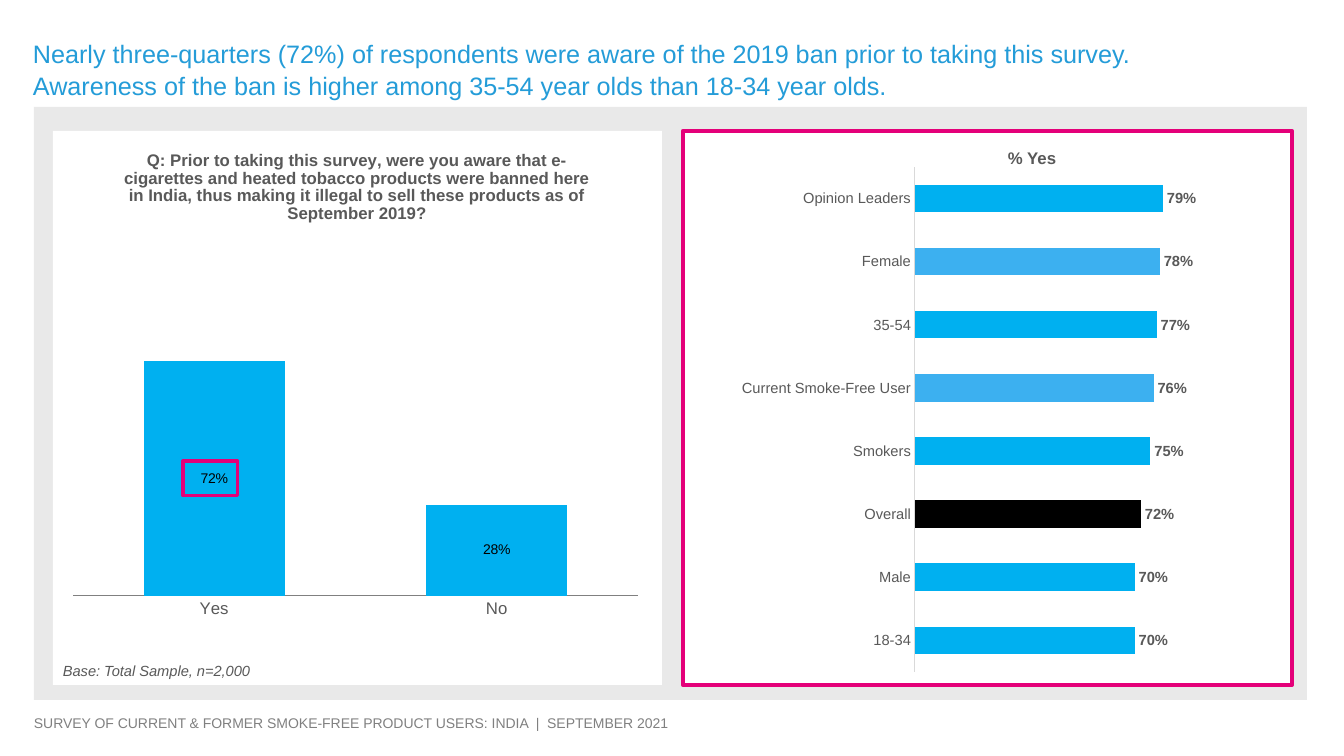
"""Build the survey slide on awareness of the 2019 ban."""
import pptx
import pptx.chart.data
import pptx.dml.color
import pptx.enum.chart
import pptx.enum.shapes
import pptx.oxml
import pptx.oxml.ns
import pptx.util

RGBColor = pptx.dml.color.RGBColor
WHITE = RGBColor(0xFF, 0xFF, 0xFF)
BLACK = RGBColor(0x00, 0x00, 0x00)
PANEL_GRAY = RGBColor(0xE9, 0xE9, 0xE9)
AXIS_GRAY = RGBColor(0xD9, 0xD9, 0xD9)
BASELINE_GRAY = RGBColor(0x80, 0x80, 0x80)
TEXT_GRAY = RGBColor(0x59, 0x59, 0x59)
PINK = RGBColor(0xE4, 0x00, 0x79)
HEADLINE_BLUE = RGBColor(0x24, 0x9C, 0xD8)
BAR_BLUE = RGBColor(0x00, 0xB0, 0xF0)
LIGHT_BLUE = RGBColor(0x3C, 0xB0, 0xF0)

FONT = "Arial"
SLIDE_SIZE = (1344, 756)
EMU_PER_PX = 914400 / 100.8

BACKDROP = (34, 107, 1273, 593)
ANSWER_PANEL = (53, 131, 609, 554)
GROUP_PANEL = (683, 131, 609, 554)
HIGHLIGHT = (183, 461, 55, 35)

HEADLINE = (
    "Nearly three-quarters (72%) of respondents were aware of the 2019 ban "
    "prior to taking this survey.\v"
    "Awareness of the ban is higher among 35-54 year olds than 18-34 year olds."
)
FOOTER = "SURVEY OF CURRENT & FORMER SMOKE-FREE PRODUCT USERS: INDIA  |  SEPTEMBER 2021"
BASE_NOTE = "Base: Total Sample, n=2,000"
QUESTION = (
    "Q: Prior to taking this survey, were you aware that e-cigarettes and heated "
    "tobacco products were banned here in India, thus making it illegal to sell "
    "these products as of September 2019?"
)

ANSWERS = {"Yes": 0.72, "No": 0.28}
AWARE_BY_GROUP = {
    "18-34": 0.70,
    "Male": 0.70,
    "Overall": 0.72,
    "Smokers": 0.75,
    "Current Smoke-Free User": 0.76,
    "35-54": 0.77,
    "Female": 0.78,
    "Opinion Leaders": 0.79,
}
GROUP_COLORS = {
    "Overall": BLACK,
    "Current Smoke-Free User": LIGHT_BLUE,
    "Female": LIGHT_BLUE,
}


def emu(box):
    return [round(length * EMU_PER_PX) for length in box]


def add_box(slide, box, fill=None, line_width=None):
    shape = slide.shapes.add_shape(pptx.enum.shapes.MSO_SHAPE.RECTANGLE, *emu(box))
    shape.shadow.inherit = False
    if fill is None:
        shape.fill.background()
    else:
        shape.fill.solid()
        shape.fill.fore_color.rgb = fill
    if line_width is None:
        shape.line.fill.background()
    else:
        shape.line.color.rgb = PINK
        shape.line.width = pptx.util.Pt(line_width)


def style_font(font, size, color, bold=False, italic=False):
    font.name = FONT
    font.size = pptx.util.Pt(size)
    font.color.rgb = color
    font.bold = bold
    font.italic = italic


def add_text(slide, box, text, size, color, bold=False, italic=False, spacing=1.0):
    frame = slide.shapes.add_textbox(*emu(box)).text_frame
    frame.word_wrap = True
    frame.text = text
    paragraph = frame.paragraphs[0]
    paragraph.line_spacing = spacing
    style_font(paragraph.font, size, color, bold, italic)


def place_plot(chart, box, plot_box):
    """Fix the inner plot area at plot_box within the chart at box."""
    left, top, width, height = box
    plot_left, plot_top, plot_width, plot_height = plot_box
    fractions = {
        "x": (plot_left - left) / width,
        "y": (plot_top - top) / height,
        "w": plot_width / width,
        "h": plot_height / height,
    }
    modes = '<c:xMode val="edge"/><c:yMode val="edge"/>'
    values = "".join(f'<c:{key} val="{value:.4f}"/>' for key, value in fractions.items())
    layout = pptx.oxml.parse_xml(
        f'<c:layout {pptx.oxml.ns.nsdecls("c")}><c:manualLayout>'
        f'<c:layoutTarget val="inner"/>{modes}{values}</c:manualLayout></c:layout>'
    )
    plot_area = chart.element.find(".//" + pptx.oxml.ns.qn("c:plotArea"))
    for automatic in plot_area.findall(pptx.oxml.ns.qn("c:layout")):
        plot_area.remove(automatic)
    plot_area.insert(0, layout)


def add_bars(slide, kind, box, plot_box, shares, gap, axis_size, axis_color):
    data = pptx.chart.data.CategoryChartData(number_format="0%")
    data.categories = list(shares)
    data.add_series("Series 1", list(shares.values()))
    chart = slide.shapes.add_chart(kind, *emu(box), data).chart
    chart.has_legend = False
    chart.has_title = False
    style_font(chart.font, axis_size, TEXT_GRAY)
    place_plot(chart, box, plot_box)

    value_axis = chart.value_axis
    value_axis.minimum_scale = 0
    value_axis.maximum_scale = 1
    value_axis.has_major_gridlines = False
    value_axis.visible = False
    category_axis = chart.category_axis
    category_axis.major_tick_mark = pptx.enum.chart.XL_TICK_MARK.NONE
    category_axis.format.line.color.rgb = axis_color
    category_axis.format.line.width = pptx.util.Pt(0.75)
    style_font(category_axis.tick_labels.font, axis_size, TEXT_GRAY)

    plot = chart.plots[0]
    plot.gap_width = gap
    plot.vary_by_categories = False
    fill = plot.series[0].format.fill
    fill.solid()
    fill.fore_color.rgb = BAR_BLUE
    return chart


def label_bars(chart, position, size, color, bold=False):
    plot = chart.plots[0]
    plot.has_data_labels = True
    labels = plot.data_labels
    labels.show_value = True
    labels.number_format = "0%"
    labels.number_format_is_linked = False
    labels.position = position
    style_font(labels.font, size, color, bold)


def add_answer_chart(slide):
    chart = add_bars(
        slide, pptx.enum.chart.XL_CHART_TYPE.COLUMN_CLUSTERED,
        (54, 131, 606, 505), (73, 270, 565, 326), ANSWERS, 100, 12, BASELINE_GRAY,
    )
    label_bars(chart, pptx.enum.chart.XL_LABEL_POSITION.CENTER, 10, BLACK)
    chart.has_title = True
    frame = chart.chart_title.text_frame
    frame.text = QUESTION
    style_font(frame.paragraphs[0].font, 12, TEXT_GRAY, bold=True)


def add_group_chart(slide):
    chart = add_bars(
        slide, pptx.enum.chart.XL_CHART_TYPE.BAR_CLUSTERED,
        (686, 131, 607, 553), (915, 167, 314, 505), AWARE_BY_GROUP, 130, 10.5, AXIS_GRAY,
    )
    label_bars(chart, pptx.enum.chart.XL_LABEL_POSITION.OUTSIDE_END, 10.5, TEXT_GRAY, bold=True)
    points = chart.plots[0].series[0].points
    for index, group in enumerate(AWARE_BY_GROUP):
        if group in GROUP_COLORS:
            fill = points[index].format.fill
            fill.solid()
            fill.fore_color.rgb = GROUP_COLORS[group]


def main():
    presentation = pptx.Presentation()
    presentation.slide_width, presentation.slide_height = emu(SLIDE_SIZE)
    slide = presentation.slides.add_slide(presentation.slide_layouts[6])

    add_box(slide, BACKDROP, PANEL_GRAY)
    add_text(slide, (24, 710, 1253, 27), FOOTER, 10, BASELINE_GRAY)
    add_box(slide, ANSWER_PANEL, WHITE)
    add_text(slide, (53, 657, 469, 29), BASE_NOTE, 10.5, TEXT_GRAY, italic=True)
    add_answer_chart(slide)
    add_box(slide, GROUP_PANEL, WHITE, 3)
    add_box(slide, HIGHLIGHT, line_width=2.25)
    add_group_chart(slide)
    add_text(slide, (998, 143, 106, 30), "% Yes", 12, TEXT_GRAY, bold=True)
    add_text(slide, (23, 31, 1287, 72), HEADLINE, 18, HEADLINE_BLUE, spacing=1.07)
    presentation.save("out.pptx")


if __name__ == "__main__":
    main()
